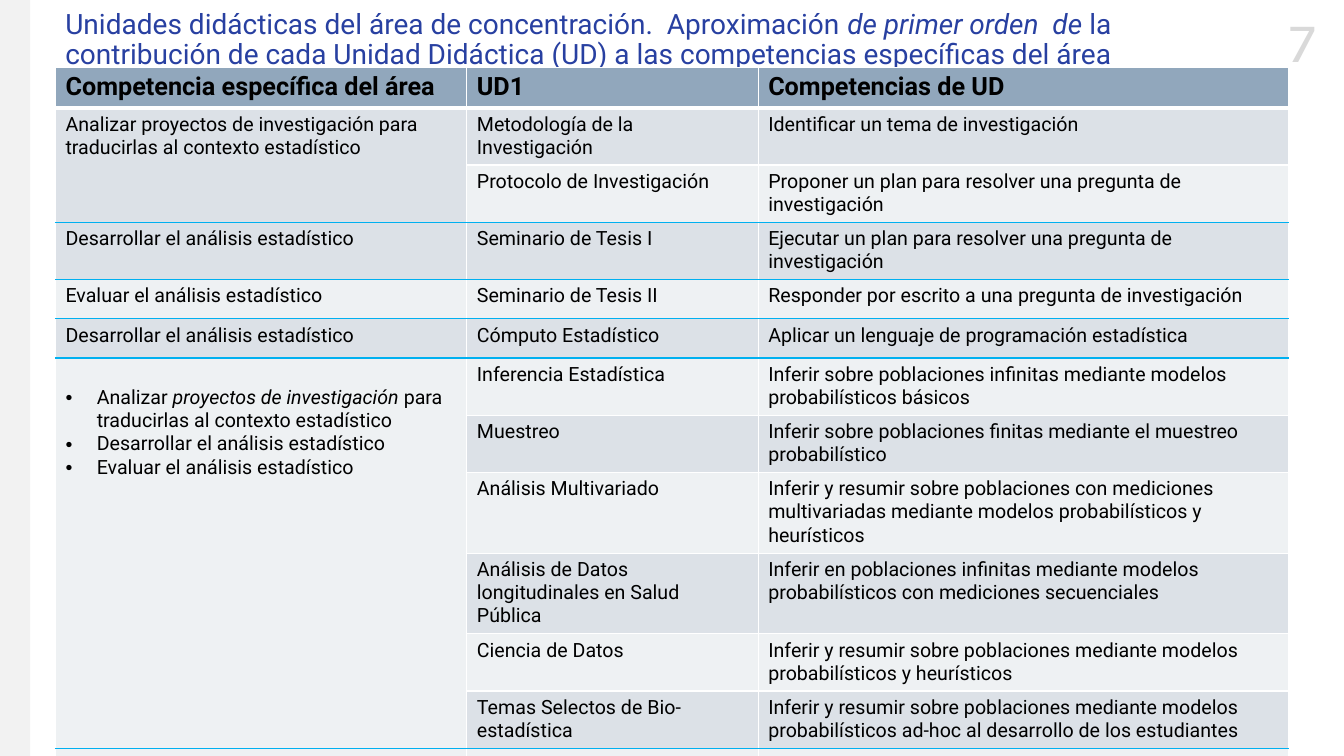
from lxml import etree
from pptx import Presentation
from pptx.dml.color import RGBColor
from pptx.enum import shapes, text
from pptx.oxml import ns
from pptx.util import Inches, Pt

WHITE = RGBColor(0xFF, 0xFF, 0xFF)
BLACK = RGBColor(0x00, 0x00, 0x00)
BLUE = RGBColor(0x28, 0x40, 0xA1)
CYAN = RGBColor(0x00, 0xB0, 0xF0)
STEEL = RGBColor(0x91, 0xA7, 0xBC)
DARK = RGBColor(0xDC, 0xE1, 0xE7)
LIGHT = RGBColor(0xEE, 0xF1, 0xF3)
PALE = RGBColor(0xF2, 0xF2, 0xF2)
GREY = RGBColor(0xD9, 0xD9, 0xD9)

HEAD = {"name": "Roboto", "size": Pt(18), "bold": True}
BODY = {"name": "Roboto", "size": Pt(14), "bold": False}
TITLE = {"name": "Roboto", "size": Pt(20)}
NUMBER = {"name": "Karla", "size": Pt(40)}

COLS = [4.08, 2.89, 5.26]
HEIGHTS = [0.39] + [0.56] * 3 + [0.39] * 2 + [0.56] * 2 + [0.79] * 2 + [0.56] * 2 + [0.39]
GROUPS = [(1, 2), (6, 11)]  # rows that share one area competence
CYAN_ENDS = {2, 3, 4, 5, 11}  # rows closed by a cyan rule

ROWS = [
    ("Competencia específica del área", "UD1", "Competencias de UD"),
    ("Analizar proyectos de investigación para traducirlas al contexto estadístico",
     "Metodología de la Investigación", "Identificar un tema de investigación"),
    ("", "Protocolo de Investigación",
     "Proponer un plan para resolver una pregunta de investigación"),
    ("Desarrollar el análisis estadístico", "Seminario de Tesis I",
     "Ejecutar un plan para resolver una pregunta de investigación"),
    ("Evaluar el análisis estadístico", "Seminario de Tesis II",
     "Responder por escrito a una pregunta de investigación"),
    ("Desarrollar el análisis estadístico", "Cómputo Estadístico",
     "Aplicar un lenguaje de programación estadística"),
    ("", "Inferencia Estadística",
     "Inferir sobre poblaciones infinitas mediante modelos probabilísticos básicos"),
    ("", "Muestreo",
     "Inferir sobre poblaciones finitas mediante el muestreo probabilístico"),
    ("", "Análisis Multivariado",
     "Inferir y resumir sobre poblaciones con mediciones multivariadas mediante "
     "modelos probabilísticos y heurísticos"),
    ("", "Análisis de Datos longitudinales en Salud Pública",
     "Inferir en poblaciones infinitas mediante modelos probabilísticos con "
     "mediciones secuenciales"),
    ("", "Ciencia de Datos",
     "Inferir y resumir sobre poblaciones mediante modelos probabilísticos y heurísticos"),
    ("", "Temas Selectos de Bio-estadística",
     "Inferir y resumir sobre poblaciones mediante modelos probabilísticos ad-hoc "
     "al desarrollo de los estudiantes"),
    ("", "", ""),
]
BULLETS = [
    [("Analizar ", False), ("proyectos de investigación ", True),
     ("para traducirlas al contexto estadístico", False)],
    [("Desarrollar el análisis estadístico", False)],
    [("Evaluar el análisis estadístico", False)],
]


def style(font, look, color):
    for key, value in look.items():
        setattr(font, key, value)
    font.color.rgb = color


def add_runs(para, runs, look, color):
    """Add (wording, italic) pairs as runs."""
    for words, italic in runs:
        run = para.add_run()
        run.text = words
        style(run.font, look, color)
        run.font.italic = italic


def add_text(slide, box, runs, look, color, wrap, align):
    frame = slide.shapes.add_textbox(*map(Inches, box)).text_frame
    frame.word_wrap = wrap
    para = frame.paragraphs[0]
    para.alignment = align
    add_runs(para, runs, look, color)
    return frame


def add_band(slide):
    band = slide.shapes.add_shape(
        shapes.MSO_SHAPE.RECTANGLE, 0, 0, Inches(0.3), Inches(7.5))
    band.shadow.inherit = False
    band.fill.solid()
    band.fill.fore_color.rgb = PALE
    band.line.fill.background()


def add_edge(cell, side, color, width):
    props = cell._tc.get_or_add_tcPr()
    line = etree.SubElement(props, ns.qn("a:ln" + side), w=str(Pt(width)))
    fill = etree.SubElement(line, ns.qn("a:solidFill"))
    etree.SubElement(fill, ns.qn("a:srgbClr"), val=str(color))


def paint(cell, row):
    """Draw the four edges, then the fill, of a cell in this row."""
    above = CYAN if row - 1 in CYAN_ENDS else WHITE
    below = CYAN if row in CYAN_ENDS else WHITE
    add_edge(cell, "L", WHITE, 1)
    add_edge(cell, "R", WHITE, 1)
    add_edge(cell, "T", above, 3 if row == 1 else 1)
    add_edge(cell, "B", below, 3 if row == 0 else 1)
    cell.fill.solid()
    cell.fill.fore_color.rgb = STEEL if row == 0 else DARK if row % 2 else LIGHT


def add_bullets(cell):
    cell.margin_top = Inches(0.28)
    frame = cell.text_frame
    for index, runs in enumerate(BULLETS):
        para = frame.add_paragraph() if index else frame.paragraphs[0]
        props = para._p.get_or_add_pPr()
        props.set("marL", str(Inches(0.31)))
        props.set("indent", str(Inches(-0.31)))
        etree.SubElement(props, ns.qn("a:buFont"), typeface="Arial")
        etree.SubElement(props, ns.qn("a:buChar"), char="•")
        add_runs(para, runs, BODY, BLACK)


def add_grid(slide):
    table = slide.shapes.add_table(
        len(ROWS), len(COLS), Inches(0.55), Inches(0.67),
        Inches(sum(COLS)), Inches(sum(HEIGHTS))).table
    for col, width in zip(table.columns, COLS):
        col.width = Inches(width)
    for row, (height, texts) in enumerate(zip(HEIGHTS, ROWS)):
        table.rows[row].height = Inches(height)
        for col, words in enumerate(texts):
            cell = table.cell(row, col)
            paint(cell, row)
            para = cell.text_frame.paragraphs[0]
            if words:
                add_runs(para, [(words, False)], BODY if row else HEAD, BLACK)
            else:
                para.font.size = BODY["size"]
    for first, last in GROUPS:
        table.cell(first, 0).merge(table.cell(last, 0))
        # The shared cell closes with the rule of its last row.
        edge = table.cell(first, 0)._tc.tcPr.find(ns.qn("a:lnB"))
        edge.find(".//" + ns.qn("a:srgbClr")).set("val", str(CYAN))
    add_bullets(table.cell(GROUPS[1][0], 0))


def main():
    deck = Presentation()
    deck.slide_width, deck.slide_height = Inches(13.33), Inches(7.5)
    slide = deck.slides.add_slide(deck.slide_layouts[6])
    add_text(slide, (12.54, 0.02, 0.75, 0.77), [("7", False)], NUMBER, GREY,
             False, text.PP_ALIGN.CENTER)
    add_band(slide)
    title = add_text(slide, (0.55, 0, 11.24, 0.8), [
        ("Unidades didácticas del área de concentración.  Aproximación ", False),
        ("de primer orden  de ", True),
        ("la contribución de cada Unidad Didáctica (UD) a las competencias "
         "específicas del área", False),
    ], TITLE, BLUE, True, text.PP_ALIGN.LEFT)
    title.vertical_anchor = text.MSO_ANCHOR.MIDDLE
    title.paragraphs[0].line_spacing = 0.9
    add_grid(slide)
    deck.save("out.pptx")


if __name__ == "__main__":
    main()
